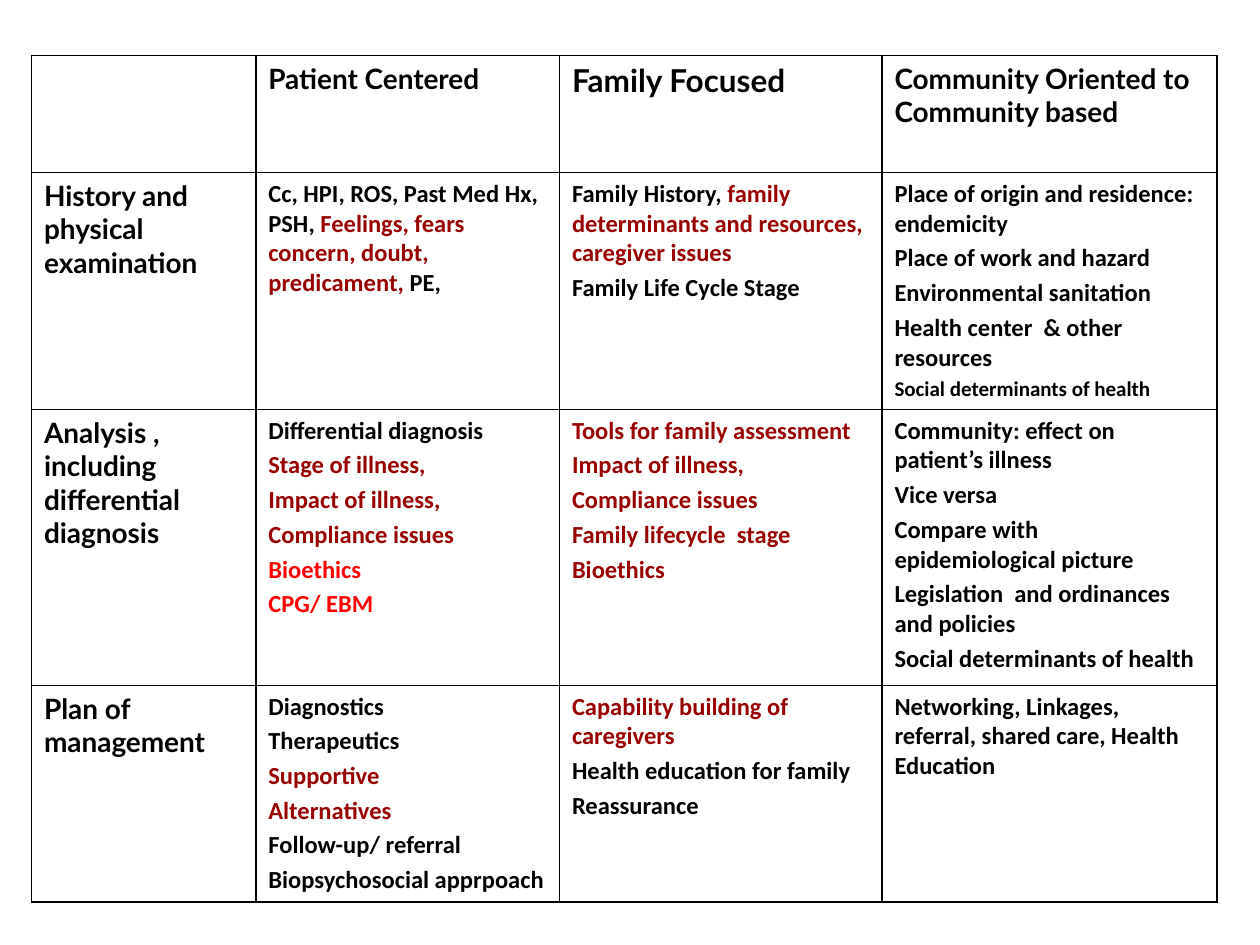
from lxml.etree import SubElement
from pptx import Presentation
from pptx.dml.color import RGBColor as Rgb
from pptx.oxml.ns import qn
from pptx.util import Inches, Pt

COLORS = {"ink": "000000", "dark": "990000", "red": "FF0000", "paper": "FFFFFF"}
COLS = [1.78, 2.41, 2.56, 2.66]
ROWS = [0.93, 1.88, 2.19, 1.72]


def dark(*lines):
    return [[(line, "dark")] for line in lines]


# A cell is a list of paragraphs: plain text, or a list of (text, color) runs.
HEADS = ["", "Patient Centered", "Family Focused",
         "Community Oriented to Community based"]
BODY = [
    ("History and physical examination",
     [[("Cc, HPI, ROS, Past Med Hx, PSH, ", "ink"),
       ("Feelings, fears concern, doubt, predicament, ", "dark"),
       ("PE,", "ink")]],
     [[("Family History, ", "ink"),
       ("family determinants and resources, caregiver issues", "dark")],
      "Family Life Cycle Stage"],
     ["Place of origin and residence: endemicity",
      "Place of work and hazard",
      "Environmental sanitation",
      "Health center  & other resources",
      "Social determinants of health"]),
    ("Analysis , including differential diagnosis",
     ["Differential diagnosis",
      *dark("Stage of illness,", "Impact of illness,", "Compliance issues"),
      [("Bioethics", "red")],
      [("CPG/ EBM", "red")]],
     dark("Tools for family assessment", "Impact of illness,",
          "Compliance issues", "Family lifecycle  stage", "Bioethics"),
     ["Community: effect on patient’s illness",
      "Vice versa",
      "Compare with epidemiological picture",
      "Legislation  and ordinances and policies",
      "Social determinants of health"]),
    ("Plan of management",
     ["Diagnostics", "Therapeutics",
      *dark("Supportive", "Alternatives"),
      "Follow-up/ referral", "Biopsychosocial apprpoach"],
     [*dark("Capability building of caregivers"),
      "Health education for family", "Reassurance"],
     ["Networking, Linkages, referral, shared care, Health Education"]),
]


def write(para, text, size=14, font="Calibri", color="ink"):
    para.space_before = Pt(size * 0.2)
    run = para.add_run()
    run.text = text
    run.font.size = Pt(size)
    run.font.name = font
    run.font.bold = True
    run.font.color.rgb = Rgb.from_string(COLORS[color])


def fill_cell(cell, paras, **style):
    frame = cell.text_frame
    for i, runs in enumerate(paras):
        para = frame.add_paragraph() if i else frame.paragraphs[0]
        if isinstance(runs, str):
            runs = [(runs, "ink")]
        for text, color in runs:
            write(para, text, color=color, **style)


def frame_cell(cell):
    """Give the cell thin black borders and a plain fill."""
    props = cell._tc.get_or_add_tcPr()
    for side in ("lnL", "lnR", "lnT", "lnB"):
        line = SubElement(props, qn(f"a:{side}"), w=str(Pt(1)))
        solid = SubElement(line, qn("a:solidFill"))
        SubElement(solid, qn("a:srgbClr"), val=COLORS["ink"])
    cell.fill.solid()
    cell.fill.fore_color.rgb = Rgb.from_string(COLORS["paper"])


def add_grid(slide, left, top):
    shape = slide.shapes.add_table(
        len(ROWS), len(COLS), Inches(left), Inches(top),
        Inches(sum(COLS)), Inches(sum(ROWS)))
    table = shape.table
    table.first_row = table.horz_banding = False
    for col, width in zip(table.columns, COLS):
        col.width = Inches(width)
    for row, height in zip(table.rows, ROWS):
        row.height = Inches(height)
    for cell in table.iter_cells():
        frame_cell(cell)

    for c, head in enumerate(HEADS):
        if head:
            size = 18 if head == "Family Focused" else 16
            fill_cell(table.cell(0, c), [head], size=size, font="Lato")
    for r, (label, *cells) in enumerate(BODY, 1):
        fill_cell(table.cell(r, 0), [label], size=16, font="Lato")
        for c, paras in enumerate(cells, 1):
            fill_cell(table.cell(r, c), paras)
    # The last line of the first community cell is set smaller.
    last = table.cell(1, 3).text_frame.paragraphs[-1]
    last.runs[0].font.size = Pt(12)
    last.space_before = Pt(12 * 0.2)


def main():
    deck = Presentation()
    deck.slide_width, deck.slide_height = Inches(10), Inches(7.5)
    slide = deck.slides.add_slide(deck.slide_layouts[6])
    add_grid(slide, 0.25, 0.44)
    deck.save("out.pptx")


if __name__ == "__main__":
    main()
